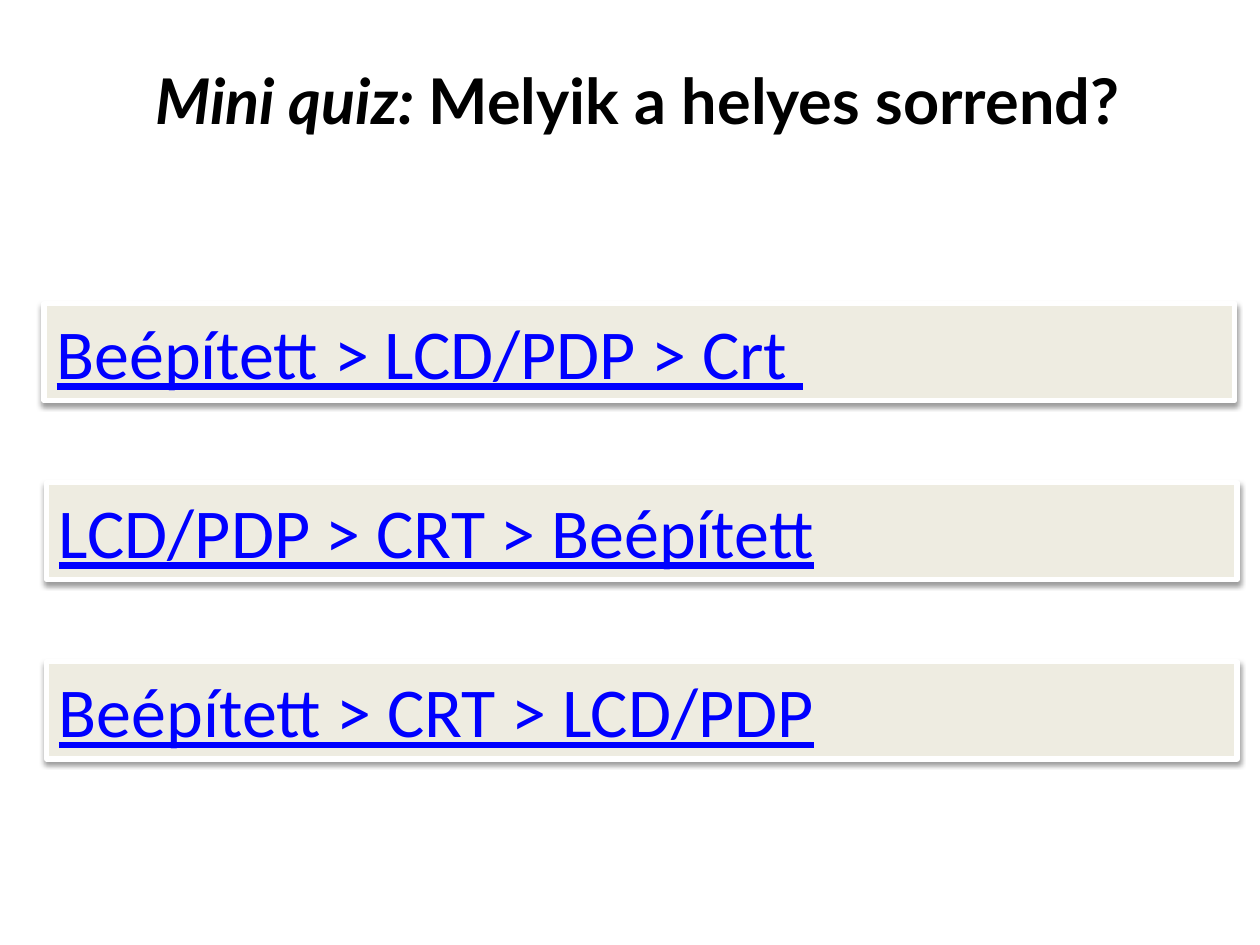
import lxml.etree
import pptx
import pptx.dml.color
import pptx.enum.shapes
import pptx.enum.text
import pptx.oxml
import pptx.oxml.ns
import pptx.util

Cm, Pt = pptx.util.Cm, pptx.util.Pt
RGBColor = pptx.dml.color.RGBColor

BLACK = RGBColor(0x00, 0x00, 0x00)
WHITE = RGBColor(0xFF, 0xFF, 0xFF)
CREAM = RGBColor(0xEE, 0xEC, 0xE1)
BLUE = RGBColor(0x00, 0x00, 0xFF)

SHADOW = (
    f'<a:effectLst {pptx.oxml.ns.nsdecls("a")}>'
    '<a:outerShdw blurRad="40000" dist="20000" dir="5400000" rotWithShape="0">'
    '<a:srgbClr val="000000"><a:alpha val="38000"/></a:srgbClr>'
    '</a:outerShdw></a:effectLst>'
)

prs = pptx.Presentation()
prs.slide_width, prs.slide_height = Cm(25.4), Cm(19.05)
s = prs.slides.add_slide(prs.slide_layouts[6])

# Title
title = s.shapes.add_textbox(Cm(0), Cm(1.12), Cm(25.7), Cm(1.8))
tf = title.text_frame
tf.word_wrap = True
p = tf.paragraphs[0]
p.alignment = pptx.enum.text.PP_ALIGN.CENTER
p.font.name, p.font.size, p.font.bold = "Lato", Pt(36), True
p.font.color.rgb = BLACK
for text, italic in [("Mini quiz: ", True), ("Melyik a helyes sorrend?", False)]:
    r = p.add_run()
    r.text = text
    r.font.italic = italic

# Answer bars
ANSWERS = [
    (0.89, "Beépített > LCD/PDP > Crt "),
    (0.94, "LCD/PDP > CRT > Beépített"),
    (0.94, "Beépített > CRT > LCD/PDP"),
]
for i, (left, answer) in enumerate(ANSWERS):
    sp = s.shapes.add_shape(
        pptx.enum.shapes.MSO_SHAPE.RECTANGLE,
        Cm(left), Cm(6.12 + 3.61 * i), Cm(24), Cm(1.96))
    sp.fill.solid()
    sp.fill.fore_color.rgb = CREAM
    sp.line.color.rgb = WHITE
    sp.line.width = Pt(3)
    sp.element.spPr.append(pptx.oxml.parse_xml(SHADOW))
    tf = sp.text_frame
    tf.word_wrap = True
    tf.vertical_anchor = pptx.enum.text.MSO_ANCHOR.TOP
    p = tf.paragraphs[0]
    p.text = answer
    p.alignment = pptx.enum.text.PP_ALIGN.LEFT
    p.font.name, p.font.size, p.font.underline = "Calibri", Pt(40), True
    p.font.color.rgb = BLUE

prs.save("out.pptx")
